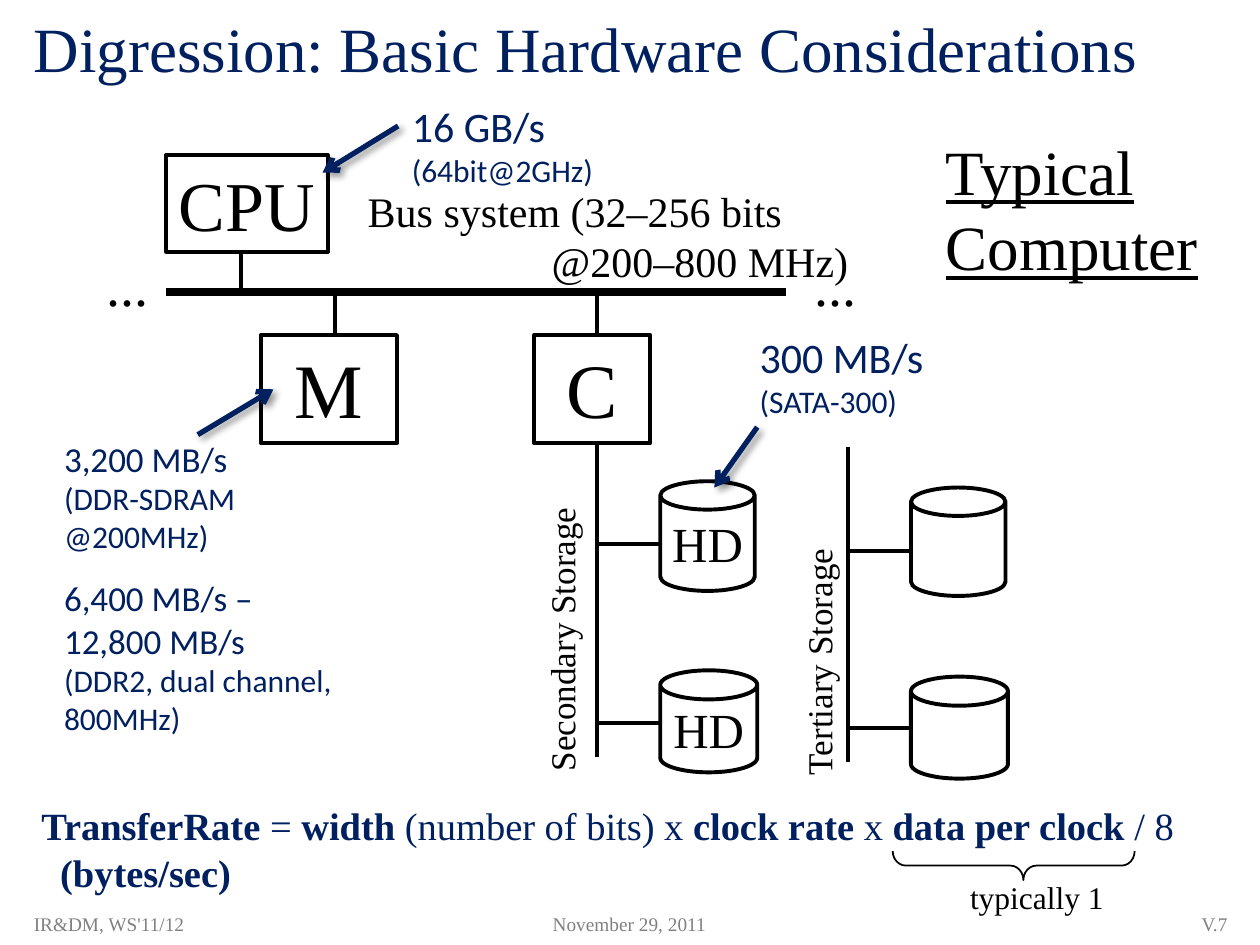
from lxml import etree
from pptx import Presentation
from pptx.dml.color import RGBColor
from pptx.enum.shapes import MSO_CONNECTOR as Connector, MSO_SHAPE as Shape
from pptx.enum.text import MSO_ANCHOR as Anchor, PP_ALIGN as Align
from pptx.oxml.ns import qn
from pptx.util import Inches, Pt

COLORS = {"ink": "000000", "navy": "002060", "gray": "808080", "paper": "FFFFFF"}
SERIF, SANS = "Times New Roman", "Calibri"


def rgb(name):
    return RGBColor.from_string(COLORS[name])


class Sketch:
    def __init__(self, slide, font=SERIF, color="ink", weight=2.25):
        self.slide = slide
        self.font = font
        self.color = color
        self.weight = weight

    def set_lines(self, frame, lines, size, color=None, font=None, align=Align.LEFT, underline=None):
        for index, line in enumerate(lines):
            words, points = line if isinstance(line, tuple) else (line, size)
            paragraph = frame.paragraphs[0] if index == 0 else frame.add_paragraph()
            paragraph.alignment = align
            paragraph.font.size = Pt(points)
            paragraph.font.name = font or self.font
            paragraph.font.color.rgb = rgb(color or self.color)
            paragraph.font.underline = underline
            for part, piece in enumerate(words.split("*")):
                if piece:
                    run = paragraph.add_run()
                    run.text = piece
                    if part % 2:
                        run.font.bold = True

    def text(self, box, lines, size, anchor=Anchor.TOP, rotation=0, wrap=True, **style):
        label = self.slide.shapes.add_textbox(*map(Inches, box))
        label.rotation = rotation
        frame = label.text_frame
        frame.word_wrap = wrap
        frame.vertical_anchor = anchor
        self.set_lines(frame, lines, size, **style)
        return frame

    def shape(self, kind, box, label="", size=28, anchor=Anchor.MIDDLE, adjust=(),
              rotation=0, fill=None, weight=None):
        part = self.slide.shapes.add_shape(kind, *map(Inches, box))
        part.shadow.inherit = False
        part.rotation = rotation
        for index, value in enumerate(adjust):
            part.adjustments[index] = value
        if fill:
            part.fill.solid()
            part.fill.fore_color.rgb = rgb(fill)
        else:
            part.fill.background()
        part.line.color.rgb = rgb(self.color)
        part.line.width = Pt(weight or self.weight)
        if label:
            part.text_frame.word_wrap = False
            part.text_frame.vertical_anchor = anchor
            self.set_lines(part.text_frame, [label], size, align=Align.CENTER)

    def line(self, start, end, weight=None, color=None):
        wire = self.slide.shapes.add_connector(Connector.STRAIGHT, *map(Inches, start + end))
        wire.line.color.rgb = rgb(color or self.color)
        wire.line.width = Pt(weight or self.weight)
        effects = etree.SubElement(wire._element.spPr, qn("a:effectLst"))
        return wire, effects

    def arrow(self, start, end):
        wire, effects = self.line(start, end, weight=3, color="navy")
        outline = wire._element.spPr.find(qn("a:ln"))
        etree.SubElement(outline, qn("a:tailEnd"), type="arrow")
        shadow = etree.SubElement(effects, qn("a:outerShdw"), blurRad=str(Pt(4)),
                                  dist=str(Pt(3)), dir="2700000", rotWithShape="0")
        tint = etree.SubElement(shadow, qn("a:srgbClr"), val=COLORS["ink"])
        etree.SubElement(tint, qn("a:alpha"), val="40000")

    def storage(self, x, top, label, label_box, disks):
        self.line((x, top), (x, top + 2.5))
        self.text(label_box, [label], 20, rotation=270)
        for y, width, height, branch, name in disks:
            self.line((x, branch), (x + 0.5, branch))
            self.shape(Shape.CAN, (x + 0.5, y, width, height), name, adjust=[0.3])


def main():
    deck = Presentation()
    deck.slide_width, deck.slide_height = Inches(10), Inches(7.5)
    sketch = Sketch(deck.slides.add_slide(deck.slide_layouts[6]))

    sketch.text((0.17, 0, 9.67, 0.75), ["Digression: Basic Hardware Considerations"], 36,
                anchor=Anchor.MIDDLE, color="navy")
    for left, width, words, align in [
        (0.17, 3, "IR&DM, WS'11/12", Align.LEFT),
        (3.83, 2.33, "November 29, 2011", Align.CENTER),
        (7.67, 2.17, "V.7", Align.RIGHT),
    ]:
        sketch.text((left, 7.17, width, 0.33), [words], 11,
                    anchor=Anchor.MIDDLE, color="gray", align=align)
    sketch.text((7.41, 1, 2.26, 1.31), ["Typical", "Computer"], 36, underline=True)

    bus = 2.32
    sketch.line((1.32, bus), (6.24, bus), weight=4.5)
    for x, end in [(1.91, 1.99), (2.66, 2.66), (4.74, 2.66)]:
        sketch.line((x, bus), (x, end))
    for left in (0.75, 6.37):
        sketch.text((left, 1.94, 0.54, 0.64), ["..."], 32, wrap=False)
    bus_label = sketch.text((2.82, 1.42, 4.01, 0.91),
                            ["Bus system (32–256 bits", "@200–800 MHz)"], 24)
    bus_label.paragraphs[1].alignment = Align.RIGHT

    for box, name, size in [
        ((1.32, 1.23, 1.28, 0.77), "CPU", 40),
        ((2.07, 2.66, 1.08, 0.86), "M", 44),
        ((4.24, 2.66, 0.92, 0.86), "C", 44),
    ]:
        sketch.shape(Shape.RECTANGLE, box, name, size, anchor=Anchor.TOP)

    sketch.storage(4.74, 3.51, "Secondary Storage", (2.88, 4.42, 3.16, 0.44),
                   [(3.82, 0.75, 0.87, 4.32, "HD"), (5.32, 0.77, 0.81, 5.74, "HD")])
    sketch.storage(6.73, 3.55, "Tertiary Storage", (5.1, 4.63, 2.8, 0.44),
                   [(3.87, 0.75, 0.86, 4.37, ""), (5.37, 0.77, 0.81, 5.78, "")])

    for box, lines, size in [
        ((3.17, 0.75, 1.66, 0.81), ["16 GB/s", ("(64bit@2GHz)", 18)], 24),
        ((5.93, 2.58, 1.51, 0.81), ["300 MB/s", ("(SATA-300)", 18)], 24),
        ((0.41, 3.42, 2.41, 1.04),
         ["3,200 MB/s", ("(DDR-SDRAM", 18), ("@200MHz)", 18)], 20),
        ((0.41, 4.53, 2.41, 1.38),
         ["6,400 MB/s –", "12,800 MB/s", ("(DDR2, dual channel, 800MHz)", 18)], 20),
    ]:
        sketch.text(box, lines, size, color="navy", font=SANS)
    for start, end in [
        ((3.16, 1), (2.56, 1.37)),
        ((6.01, 3.39), (5.67, 3.87)),
        ((1.57, 3.45), (2.17, 3.09)),
    ]:
        sketch.arrow(start, end)

    formula = sketch.text(
        (0.23, 6.32, 9.73, 0.84),
        ["*TransferRate *= *width* (number of bits) x *clock rate* x *data per clock* / 8",
         "*(bytes/sec)*"], 22, color="navy")
    formula.paragraphs[1]._p.get_or_add_pPr().set("marL", str(Inches(0.15)))
    sketch.shape(Shape.RIGHT_BRACE, (7.93, 5.91, 0.23, 1.92), adjust=[0.45, 0.46],
                 rotation=90, fill="paper", weight=1)
    sketch.text((7.6, 6.92, 1.32, 0.4), ["typically 1"], 18)

    deck.save("out.pptx")


if __name__ == "__main__":
    main()
